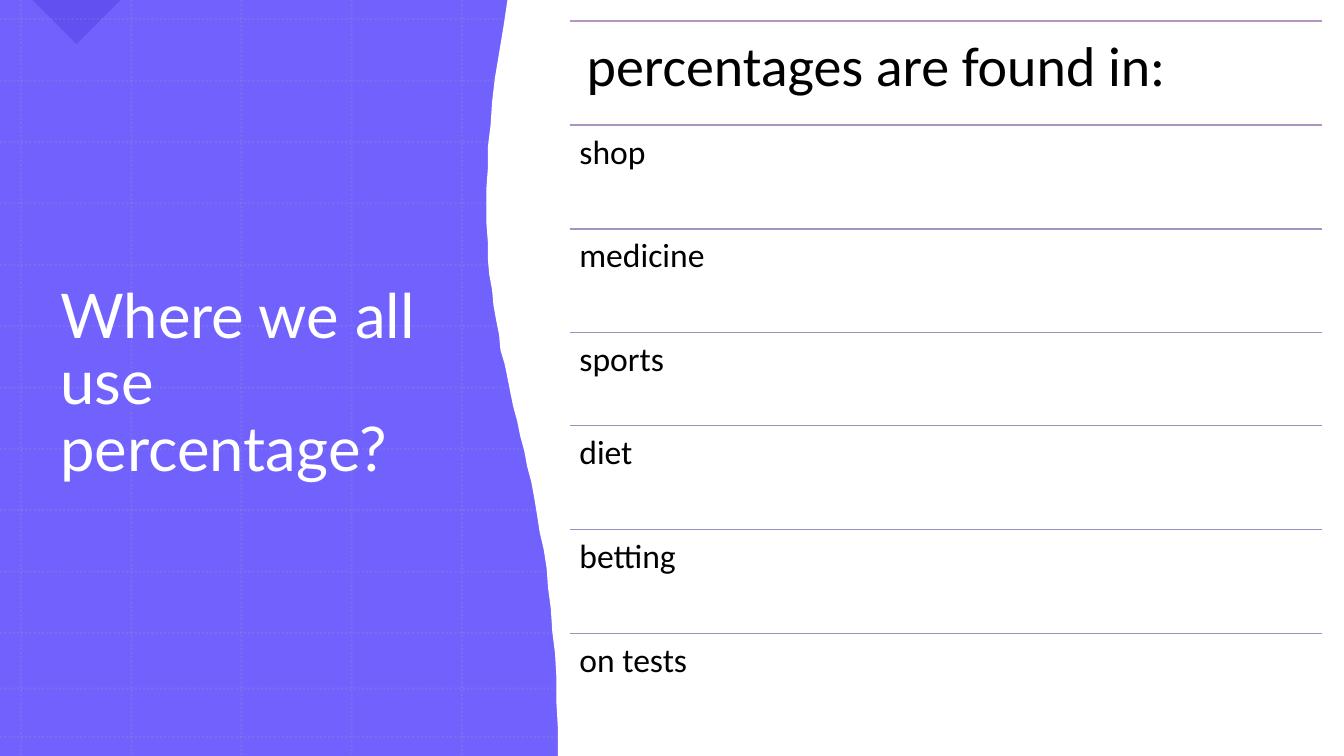
import pptx
import pptx.dml.color
import pptx.enum.dml
import pptx.enum.shapes
import pptx.enum.text
import pptx.oxml.ns
import pptx.util
from lxml import etree

Pt = pptx.util.Pt
qn = pptx.oxml.ns.qn
WIDTH, HEIGHT = 960, 540


def color(hex_code):
    return pptx.dml.color.RGBColor.from_string(hex_code)


def curve(start, first, second, end, steps=40):
    for step in range(steps + 1):
        t = step / steps
        yield tuple(
            (1 - t) ** 3 * a + 3 * (1 - t) ** 2 * t * b + 3 * (1 - t) * t ** 2 * c + t ** 3 * d
            for a, b, c, d in zip(start, first, second, end)
        )


class SlidePainter:
    """Draws styled elements on one slide, with lengths in points."""

    ACCENT = "7162FE"
    GRID = "B495C2"
    WHITE = "FFFFFF"
    BLACK = "000000"
    TITLE_FONT = "Lato"
    BODY_FONT = "Calibri"

    def __init__(self, slide):
        self.shapes = slide.shapes

    def fade(self, shape, percent):
        for tint in shape.element.spPr.iter(qn("a:srgbClr")):
            etree.SubElement(tint, qn("a:alpha"), val=str(percent * 1000))

    def paint(self, shape, fill, line=None):
        shape.shadow.inherit = False
        shape.fill.solid()
        shape.fill.fore_color.rgb = color(fill)
        if line:
            shape.line.color.rgb = color(line)
            shape.line.width = Pt(1)
        else:
            shape.line.fill.background()

    def block(self, preset, left, top, width, height, fill, rotation=0, opacity=None):
        shape = self.shapes.add_shape(preset, Pt(left), Pt(top), Pt(width), Pt(height))
        shape.rotation = rotation
        self.paint(shape, fill)
        if opacity:
            self.fade(shape, opacity)

    def outline(self, points, fill):
        builder = self.shapes.build_freeform(*points[0], scale=Pt(1))
        builder.add_line_segments(points[1:], close=True)
        self.paint(builder.convert_to_shape(), fill, fill)

    def rule(self, x1, y1, x2, y2, tint, width=1):
        line = self.shapes.add_connector(
            pptx.enum.shapes.MSO_CONNECTOR.STRAIGHT, Pt(x1), Pt(y1), Pt(x2), Pt(y2)
        )
        line.line.color.rgb = color(tint)
        line.line.width = Pt(width)
        etree.SubElement(line.element.spPr, qn("a:effectLst"))
        return line

    def grid_rule(self, x1, y1, x2, y2):
        line = self.rule(x1, y1, x2, y2, self.GRID, 1.5)
        line.line.dash_style = pptx.enum.dml.MSO_LINE.ROUND_DOT
        self.fade(line, 20)

    def text(self, words, left, top, width, height, size, font, tint, insets,
             anchor=pptx.enum.text.MSO_ANCHOR.TOP):
        frame = self.shapes.add_textbox(Pt(left), Pt(top), Pt(width), Pt(height)).text_frame
        frame.word_wrap = True
        frame.vertical_anchor = anchor
        frame.margin_left = frame.margin_right = Pt(insets[0])
        frame.margin_top = frame.margin_bottom = Pt(insets[1])
        paragraph = frame.paragraphs[0]
        paragraph.line_spacing = 0.9
        run = paragraph.add_run()
        run.text = words
        run.font.size = Pt(size)
        run.font.name = font
        run.font.color.rgb = color(tint)


def main():
    deck = pptx.Presentation()
    deck.slide_width, deck.slide_height = Pt(WIDTH), Pt(HEIGHT)
    painter = SlidePainter(deck.slides.add_slide(deck.slide_layouts[6]))
    presets = pptx.enum.shapes.MSO_SHAPE

    painter.block(presets.RECTANGLE, 0, 0, WIDTH, HEIGHT, painter.ACCENT)
    painter.block(presets.RIGHT_TRIANGLE, 32.4, -22.3, 44.6, 44.6, "1201AF", 315, 17)
    for x in [15.1 + 78.7 * column for column in range(12)] + [944.6]:
        painter.grid_rule(x, 0, x, HEIGHT)
    for y in [13.7 + 43.85 * row for row in range(11)] + [491.8, 526.3]:
        painter.grid_rule(0, y, WIDTH, y)

    painter.text("Where we all use percentage?", 36, 56.9, 319.7, 435.6, 44,
                 painter.TITLE_FONT, painter.WHITE, (7.2, 3.6),
                 pptx.enum.text.MSO_ANCHOR.MIDDLE)

    wave = list(curve((398.9, HEIGHT), (398.9, 270.7), (314.6, 269.3), (362.9, 0)))
    painter.outline([(WIDTH, 0), (WIDTH, HEIGHT)] + wave, painter.WHITE)

    uses = [
        ("percentages are found in:", "B495C2", 74.2, 40, 12.3),
        ("shop", "AC94C1", 74.2, 24, 7.2),
        ("medicine", "A493C0", 74.2, 24, 7.2),
        ("sports", "9C92BF", 66.2, 24, 7.2),
        ("diet", "9491BD", 74.2, 24, 7.2),
        ("betting", "9093BC", 74.2, 24, 7.2),
        ("on tests", "8F99BB", 74.2, 24, 7.2),
    ]
    left, width, top = 406.8, 537.8, 15.1
    for words, tint, height, size, inset in uses:
        painter.rule(left, top, left + width, top, tint)
        painter.text(words, left, top, width, height, size,
                     painter.BODY_FONT, painter.BLACK, (inset, inset))
        top += height

    deck.save("out.pptx")


if __name__ == "__main__":
    main()
